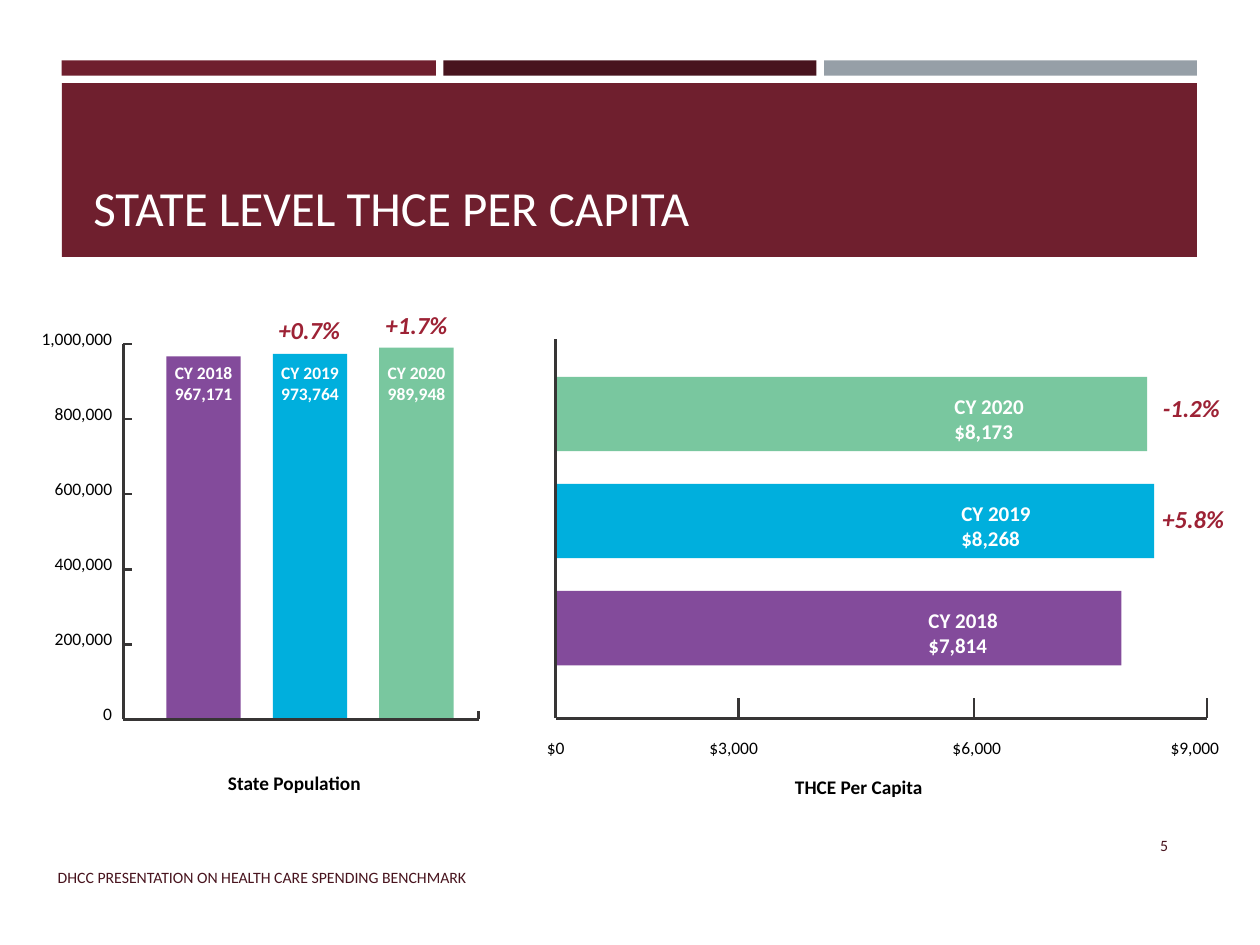
import pptx
import pptx.util
import pptx.dml.color
import pptx.enum.shapes
import pptx.enum.text
import pptx.oxml

Inches, Pt = pptx.util.Inches, pptx.util.Pt
ALIGN = pptx.enum.text.PP_ALIGN
ANCHOR = pptx.enum.text.MSO_ANCHOR
RECTANGLE = pptx.enum.shapes.MSO_SHAPE.RECTANGLE
STRAIGHT = pptx.enum.shapes.MSO_CONNECTOR.STRAIGHT

# Content
TITLE = "STATE LEVEL THCE PER CAPITA"
FOOTER = "DHCC PRESENTATION ON HEALTH CARE SPENDING BENCHMARK"
PAGE_NUMBER = "5"
MAROON, DARK_MAROON, GREY, RED = "6F1F2E", "48141E", "969FA7", "9D2235"
BLACK, WHITE, AXIS = "000000", "FFFFFF", "373535"
PURPLE, BLUE, GREEN = "834B9B", "00AFDD", "79C79F"

HEADER_BARS = [(0.49, 2.97, MAROON), (3.52, 2.96, DARK_MAROON), (6.54, 2.96, GREY)]
POPULATION = [("CY 2018", 967171, PURPLE), ("CY 2019", 973764, BLUE),
              ("CY 2020", 989948, GREEN)]
PER_CAPITA = [("CY 2020", 8173, GREEN), ("CY 2019", 8268, BLUE),
              ("CY 2018", 7814, PURPLE)]
# Amount, tick position (None at the axis itself), left edge of its label
COST_TICKS = [("$0", None, 4.34), ("$3,000", 5.86, 5.63),
              ("$6,000", 7.73, 7.56), ("$9,000", 9.58, 9.29)]
CHANGES = [("+0.7%", 2.05, 2.45, 0.81), ("+1.7%", 2.9, 2.41, 0.81),
           ("-1.2%", 9.08, 3.07, 0.75), ("+5.8%", 9.08, 3.95, 0.78)]
CAPTIONS = [("State Population", 1.81, 6.12), ("THCE Per Capita", 6.31, 6.15)]

# Chart geometry in inches
BAR_THICKNESS = 0.59
POPULATION_LEFT, POPULATION_RIGHT = 0.98, 3.8
POPULATION_TOP, POPULATION_BASE = 2.73, 5.71
POPULATION_MAX, POPULATION_STEP = 1000000, 200000
COST_LEFT, COST_RIGHT, COST_TOP, COST_BASE = 4.41, 9.58, 2.69, 5.7
INCHES_PER_THOUSAND = 0.57

presentation = pptx.Presentation()
presentation.slide_width, presentation.slide_height = Inches(10), Inches(7.5)
slide = presentation.slides.add_slide(presentation.slide_layouts[5])


def color(value):
    return pptx.dml.color.RGBColor.from_string(value)


def add_rectangle(left, top, width, height, fill):
    shape = slide.shapes.add_shape(RECTANGLE, Inches(left), Inches(top),
                                   Inches(width), Inches(height))
    shape.shadow.inherit = False
    shape.fill.solid()
    shape.fill.fore_color.rgb = color(fill)
    shape.line.fill.background()


def add_line(x1, y1, x2, y2):
    connector = slide.shapes.add_connector(STRAIGHT, Inches(x1), Inches(y1),
                                           Inches(x2), Inches(y2))
    connector.line.color.rgb = color(AXIS)
    connector.line.width = Pt(1.5)
    properties = connector._element.spPr
    properties.append(properties.makeelement(pptx.oxml.ns.qn("a:effectLst"), {}))


def write(shape, lines, size, text_color, align=ALIGN.LEFT, anchor=ANCHOR.TOP,
          bold=False, italic=False, spacing=None):
    frame = shape.text_frame
    frame.vertical_anchor = anchor
    for index, line in enumerate(lines):
        paragraph = frame.add_paragraph() if index else frame.paragraphs[0]
        paragraph.alignment = align
        if index and spacing:
            paragraph.line_spacing = Pt(spacing)
        run = paragraph.add_run()
        run.text = line
        font = run.font
        font.name, font.size, font.bold, font.italic = "Calibri", Pt(size), bold, italic
        font.color.rgb = color(text_color)


def add_text(lines, left, top, width, height, size, text_color,
             margins=False, wrap=False, **style):
    shape = slide.shapes.add_textbox(Inches(left), Inches(top),
                                     Inches(width), Inches(height))
    frame = shape.text_frame
    frame.word_wrap = wrap
    if not margins:
        frame.margin_left = frame.margin_right = 0
        frame.margin_top = frame.margin_bottom = 0
    write(shape, lines, size, text_color, **style)


# Header and title
for left, width, fill in HEADER_BARS:
    add_rectangle(left, 0.48, width, 0.12, fill)
add_rectangle(0.49, 0.66, 9.01, 1.38, MAROON)

title = slide.shapes.title
title.left, title.top = Inches(0.64), Inches(0.75)
title.width, title.height = Inches(8.74), Inches(1.18)
title.text_frame.auto_size = pptx.enum.text.MSO_AUTO_SIZE.NONE
write(title, [TITLE], 28, WHITE, anchor=ANCHOR.BOTTOM)
# Bring the title in front of the header band
slide.shapes._spTree.append(title._element)

# Footer
add_text([FOOTER], 0.36, 6.76, 5.33, 0.4, 9, DARK_MAROON, margins=True,
         wrap=True, anchor=ANCHOR.MIDDLE)
add_text([PAGE_NUMBER], 8.53, 6.51, 0.84, 0.4, 9, DARK_MAROON, margins=True,
         wrap=True, align=ALIGN.RIGHT, anchor=ANCHOR.MIDDLE)

# Population columns
axis_height = POPULATION_BASE - POPULATION_TOP
for index, (year, people, fill) in enumerate(POPULATION):
    left = 1.32 + index * 0.845
    height = axis_height * people / POPULATION_MAX
    add_rectangle(left, POPULATION_BASE - height, BAR_THICKNESS, height, fill)
    add_text([year, f"{people:,}"], left, 2.87, BAR_THICKNESS, 0.34, 10, WHITE,
             align=ALIGN.CENTER, bold=True, spacing=12)

# Population axes
add_line(POPULATION_LEFT, POPULATION_BASE, POPULATION_RIGHT, POPULATION_BASE)
add_line(POPULATION_RIGHT, POPULATION_BASE, POPULATION_RIGHT, POPULATION_BASE - 0.07)
add_line(POPULATION_LEFT, POPULATION_BASE, POPULATION_LEFT, POPULATION_TOP)
for people in range(0, POPULATION_MAX + 1, POPULATION_STEP):
    y = POPULATION_BASE - axis_height * people / POPULATION_MAX
    add_line(POPULATION_LEFT, y, POPULATION_LEFT + 0.07, y)
    add_text([f"{people:,}"], 0.33, y - 0.13, 0.56, 0.22, 10, BLACK,
             align=ALIGN.RIGHT)

# Per capita bars
for index, (year, dollars, fill) in enumerate(PER_CAPITA):
    top = 2.99 + index * 0.85
    width = 4.75 * dollars / 8268
    add_rectangle(COST_LEFT, top, width, BAR_THICKNESS, fill)
    add_text([year, f"${dollars:,}"], COST_LEFT + width - 1.53, top + 0.13,
             0.6, 0.4, 12, WHITE, bold=True)

# Per capita axes
add_line(COST_LEFT, COST_BASE, COST_RIGHT, COST_BASE)
add_line(COST_LEFT, COST_BASE, COST_LEFT, COST_TOP)
for label, tick, left in COST_TICKS:
    if tick:
        add_line(tick, COST_BASE, tick, COST_BASE - 0.16)
    add_text([label], left, 5.85, 0.4, 0.17, 10, BLACK)

# Year-on-year changes and chart captions
for label, left, top, width in CHANGES:
    add_text([label], left, top, width, 0.34, 14, RED, margins=True, wrap=True,
             align=ALIGN.CENTER, bold=True, italic=True)
for caption, left, top in CAPTIONS:
    add_text([caption], left, top, 1.06, 0.19, 11, BLACK, bold=True)

presentation.save("out.pptx")
